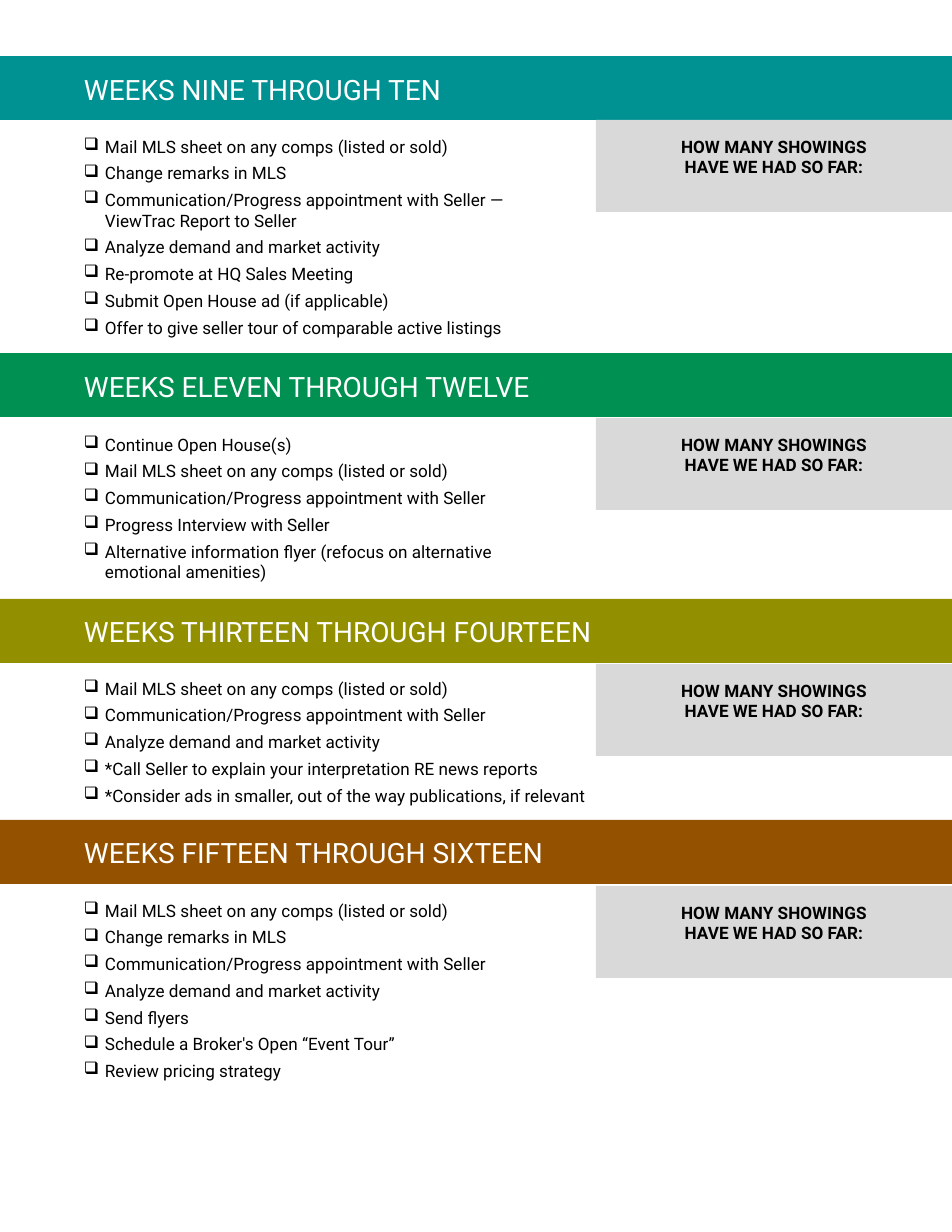
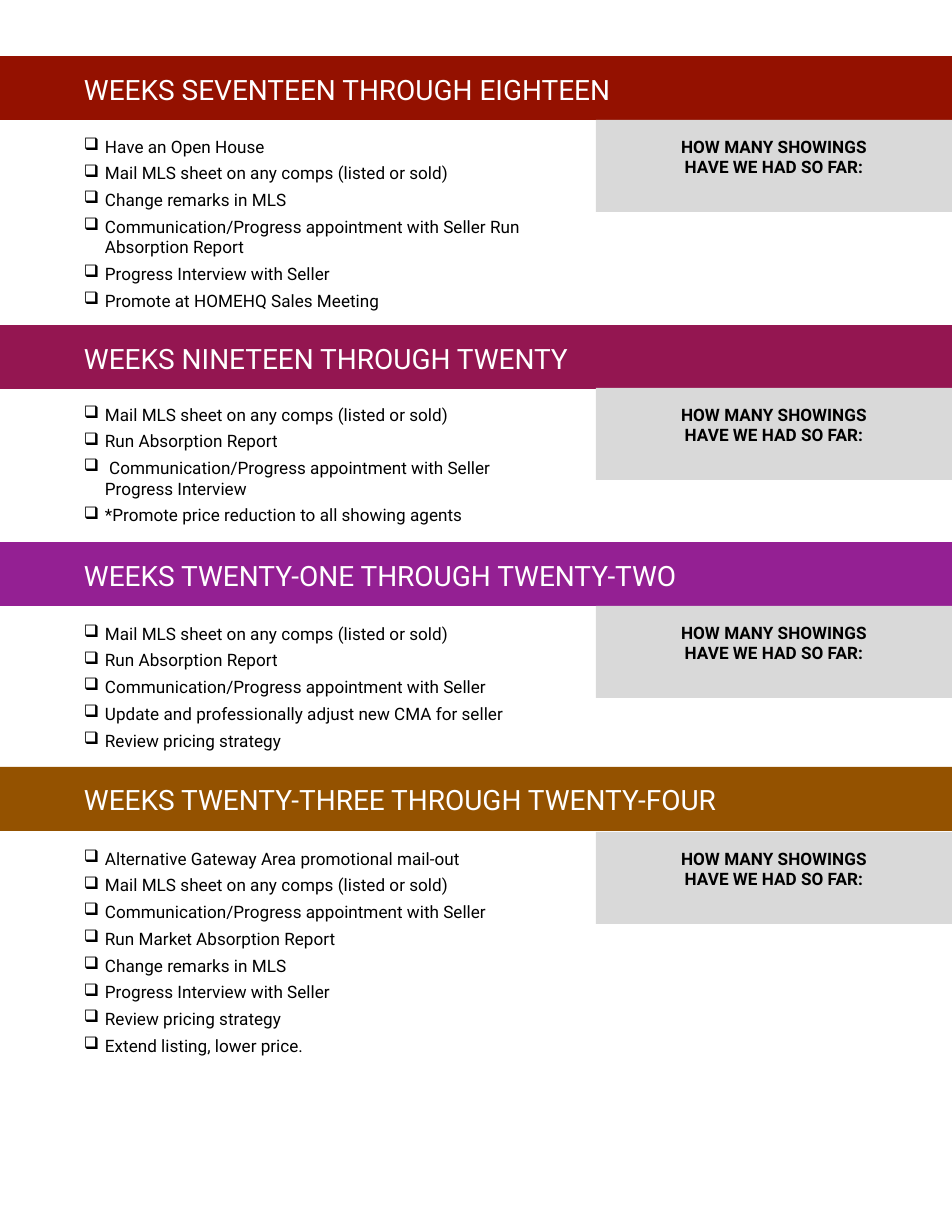
"""Build two pages of weekly listing checklists with coloured heading bands."""
from lxml import etree
from pptx import Presentation
from pptx.dml.color import RGBColor
from pptx.enum.shapes import MSO_SHAPE
from pptx.enum.text import MSO_ANCHOR, PP_ALIGN
from pptx.oxml.ns import qn
from pptx.util import Emu, Pt

RECTANGLE = MSO_SHAPE.RECTANGLE
TOP = MSO_ANCHOR.TOP
LEFT, CENTER = PP_ALIGN.LEFT, PP_ALIGN.CENTER

MAIL = "Mail MLS sheet on any comps (listed or sold)"
REMARKS = "Change remarks in MLS"
APPOINTMENT = "Communication/Progress appointment with Seller"
DEMAND = "Analyze demand and market activity"
INTERVIEW = "Progress Interview with Seller"
ABSORPTION = "Run Absorption Report"
PRICING = "Review pricing strategy"
SHOWINGS = "HOW MANY SHOWINGS HAVE WE HAD SO FAR:"

# Each section: heading, colour, then band, list and panel tops, list height, tasks.
PAGES = [
    [
        ("NINE THROUGH TEN", "009193", 56, 120, 120, 233, [
            MAIL, REMARKS, APPOINTMENT + " — ViewTrac Report to Seller", DEMAND,
            "Re-promote at HQ Sales Meeting",
            "Submit Open House ad (if applicable)",
            "Offer to give seller tour of comparable active listings"]),
        ("ELEVEN THROUGH TWELVE", "009051", 353, 418, 418, 179, [
            "Continue Open House(s)", MAIL, APPOINTMENT, INTERVIEW,
            "Alternative information flyer (refocus on alternative emotional amenities)"]),
        ("THIRTEEN THROUGH FOURTEEN", "929000", 599, 662, 664, 158, [
            MAIL, APPOINTMENT, DEMAND,
            "*Call Seller to explain your interpretation RE news reports",
            "*Consider ads in smaller, out of the way publications, if relevant"]),
        ("FIFTEEN THROUGH SIXTEEN", "945200", 820, 884, 886, 212, [
            MAIL, REMARKS, APPOINTMENT, DEMAND, "Send flyers",
            "Schedule a Broker's Open “Event Tour”", PRICING]),
    ],
    [
        ("SEVENTEEN THROUGH EIGHTEEN", "941100", 56, 120, 120, 206, [
            "Have an Open House", MAIL, REMARKS, APPOINTMENT + " " + ABSORPTION,
            INTERVIEW, "Promote at HOMEHQ Sales Meeting"]),
        ("NINETEEN THROUGH TWENTY", "941651", 325, 388, 388, 152, [
            MAIL, ABSORPTION, " " + APPOINTMENT + " Progress Interview",
            "*Promote price reduction to all showing agents"]),
        ("TWENTY-ONE THROUGH TWENTY-TWO", "942093", 542, 607, 606, 158, [
            MAIL, ABSORPTION, APPOINTMENT,
            "Update and professionally adjust new CMA for seller", PRICING]),
        ("TWENTY-THREE THROUGH TWENTY-FOUR", "945200", 767, 832, 832, 240, [
            "Alternative Gateway Area promotional mail-out", MAIL, APPOINTMENT,
            "Run Market Absorption Report", REMARKS, INTERVIEW, PRICING,
            "Extend listing, lower price."]),
    ],
]

FONT = "Roboto"
WHITE, BLACK, PANEL_GREY = "FFFFFF", "000000", "D9D9D9"
PAGE_WIDTH, PAGE_HEIGHT = 952, 1232
PANEL_LEFT, PANEL_HEIGHT = 596, 92
BAND_HEIGHT = 64
MARGIN, NARROW_MARGIN, PADDING = 84, 42, 16
BULLET_INDENT = 21
NARROW_SECTIONS = 2


def px(length):
    return Emu(length * 914400 // 112)


def color(hex_string):
    return RGBColor.from_string(hex_string)


def write(shape, lines, size, ink, bold=False, align=LEFT, right=MARGIN):
    frame = shape.text_frame
    frame.word_wrap = True
    frame.vertical_anchor = TOP
    frame.margin_left, frame.margin_right = px(MARGIN), px(right)
    frame.margin_top = frame.margin_bottom = px(PADDING)
    frame.text = "\n".join(lines)
    for paragraph in frame.paragraphs:
        paragraph.alignment = align
        for run in paragraph.runs:
            run.font.name = FONT
            run.font.size = Pt(size)
            run.font.bold = bold
            run.font.color.rgb = color(ink)


def add_block(slide, left, top, width, height, fill):
    shape = slide.shapes.add_shape(RECTANGLE, px(left), px(top), px(width), px(height))
    shape.shadow.inherit = False
    shape.fill.solid()
    shape.fill.fore_color.rgb = color(fill)
    shape.line.fill.background()
    return shape


def add_checklist(slide, top, width, height, right, tasks):
    box = slide.shapes.add_textbox(px(0), px(top), px(width), px(height))
    write(box, tasks, 11, BLACK, right=right)
    for paragraph in box.text_frame.paragraphs:
        paragraph.space_after = Pt(4)
        properties = paragraph._p.get_or_add_pPr()
        properties.set("marL", str(px(BULLET_INDENT)))
        properties.set("indent", str(-px(BULLET_INDENT)))
        etree.SubElement(properties, qn("a:buChar")).set("char", "❑")


def add_section(slide, section, narrow):
    weeks, fill, band_top, list_top, panel_top, list_height, tasks = section
    band = add_block(slide, 0, band_top, PAGE_WIDTH, BAND_HEIGHT, fill)
    write(band, ["WEEKS " + weeks], 18, WHITE)
    width, right = (PANEL_LEFT, NARROW_MARGIN) if narrow else (PAGE_WIDTH, MARGIN)
    add_checklist(slide, list_top, width, list_height, right, tasks)
    panel = add_block(slide, PANEL_LEFT, panel_top, PAGE_WIDTH - PANEL_LEFT,
                      PANEL_HEIGHT, PANEL_GREY)
    write(panel, [SHOWINGS], 11, BLACK, bold=True, align=CENTER)


def main():
    presentation = Presentation()
    presentation.slide_width = px(PAGE_WIDTH)
    presentation.slide_height = px(PAGE_HEIGHT)
    for sections in PAGES:
        slide = presentation.slides.add_slide(presentation.slide_layouts[6])
        for index, section in enumerate(sections):
            add_section(slide, section, index < NARROW_SECTIONS)
    presentation.save("out.pptx")


if __name__ == "__main__":
    main()
